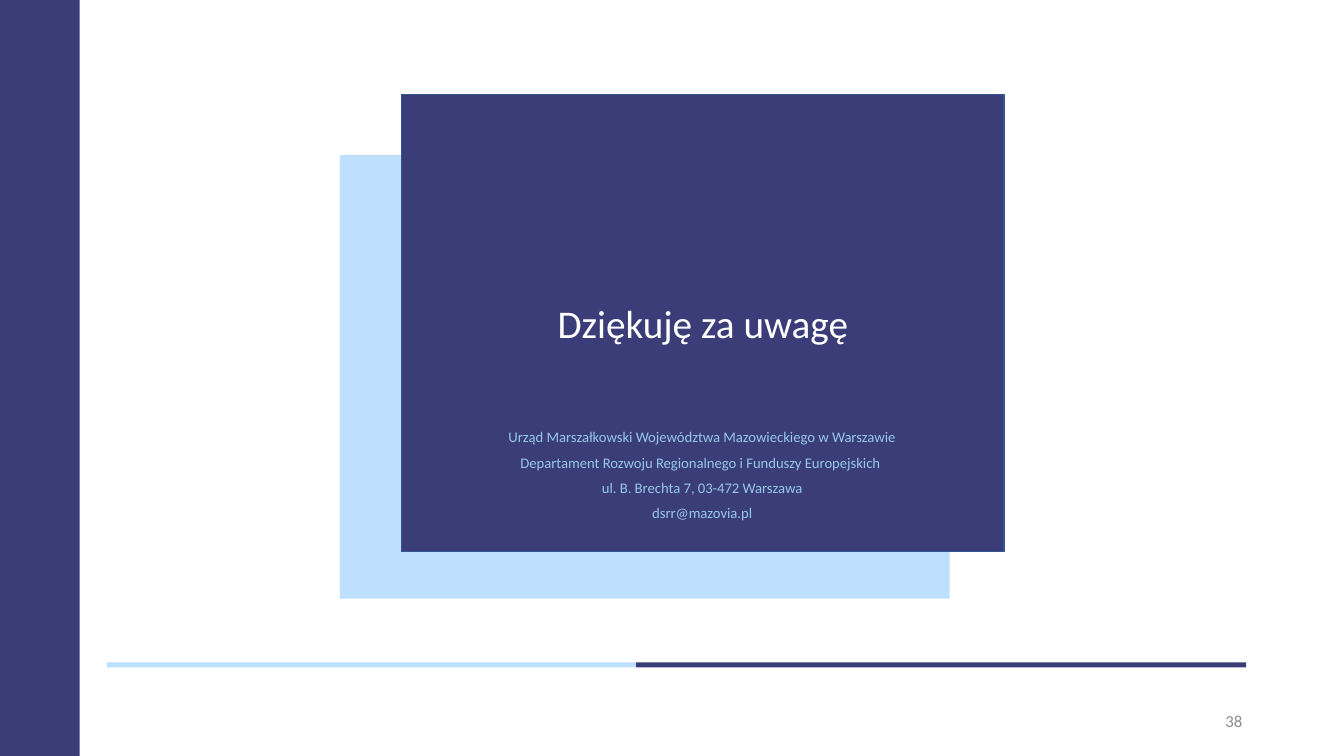
import pptx
import pptx.util
import pptx.dml.color
import pptx.enum.shapes
import pptx.enum.text

THEME = {
    "font": "Calibri",
    "navy": "3B3D79", "sky": "BDE0FF", "edge": "325491",
    "white": "FFFFFF", "contact": "96C8EA", "grey": "8C8C8C",
    "title_size": 28, "contact_size": 10.5, "number_size": 12,
}
WIDTH, HEIGHT = 13.33, 7.5
ALIGN = pptx.enum.text.PP_ALIGN

deck = pptx.Presentation()
deck.slide_width = pptx.util.Inches(WIDTH)
deck.slide_height = pptx.util.Inches(HEIGHT)
page = deck.slides.add_slide(deck.slide_layouts[6])


def add_block(left, top, width, height, color):
    box = page.shapes.add_shape(
        pptx.enum.shapes.MSO_SHAPE.RECTANGLE,
        *map(pptx.util.Inches, (left, top, width, height)))
    box.shadow.inherit = False
    box.fill.solid()
    box.fill.fore_color.rgb = pptx.dml.color.RGBColor.from_string(THEME[color])
    box.line.fill.background()
    return box


def write_lines(box, lines, size, color, align, spacing=1.0, before=0):
    frame = box.text_frame
    frame.word_wrap = True
    frame.vertical_anchor = pptx.enum.text.MSO_ANCHOR.MIDDLE
    for index, line in enumerate(lines):
        para = frame.add_paragraph() if index else frame.paragraphs[0]
        para.alignment = align
        para.line_spacing = spacing
        para.space_before = pptx.util.Pt(before if index else 0)
        span = para.add_run()
        span.text = line
        span.font.name = THEME["font"]
        span.font.size = pptx.util.Pt(THEME[size])
        span.font.color.rgb = pptx.dml.color.RGBColor.from_string(THEME[color])


# Pale panel behind the card
add_block(3.37, 1.54, 6.05, 4.4, "sky")

# Two-tone footer rule, its parts laid end to end
rule_left = 1.06
for length, color in ((5.25, "sky"), (6.05, "navy")):
    add_block(rule_left, 6.57, length, 0.05, color)
    rule_left += length

# Side band
add_block(0, 0, 0.06 * WIDTH - 0.01, HEIGHT, "navy")

# Thank-you card
card = add_block(3.98, 0.94, 5.98, 4.53, "navy")
card.line.color.rgb = pptx.dml.color.RGBColor.from_string(THEME["edge"])
card.line.width = pptx.util.Pt(1)
write_lines(card, ["Dziękuję za uwagę"], "title_size", "white", ALIGN.CENTER)

# Contact details
contact = page.shapes.add_textbox(*map(pptx.util.Inches, (4.73, 3.95, 4.47, 1.49)))
write_lines(contact, [
    "Urząd Marszałkowski Województwa Mazowieckiego w Warszawie",
    "Departament Rozwoju Regionalnego i Funduszy Europejskich ",
    "ul. B. Brechta 7, 03-472 Warszawa",
    "dsrr@mazovia.pl",
], "contact_size", "contact", ALIGN.CENTER, spacing=1.2, before=3)

# Page number
number = page.shapes.add_textbox(*map(pptx.util.Inches, (9.42, 6.95, 3, 0.4)))
write_lines(number, ["38"], "number_size", "grey", ALIGN.RIGHT)

deck.save("out.pptx")
